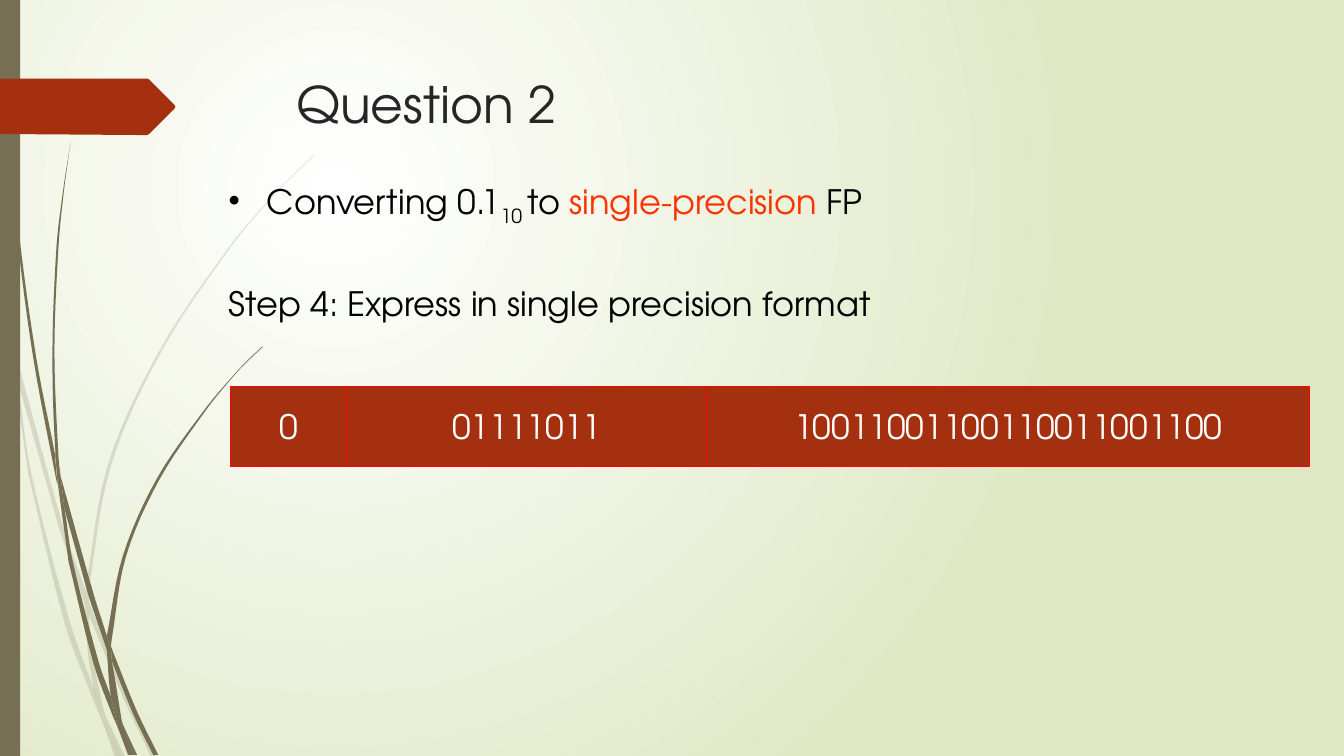
from dataclasses import dataclass
from math import dist

from lxml.etree import SubElement
from pptx import Presentation
from pptx.dml.color import RGBColor as Color
from pptx.enum.shapes import MSO_SHAPE as Shape
from pptx.enum.text import MSO_ANCHOR as Anchor, PP_ALIGN as Align
from pptx.oxml.ns import qn
from pptx.util import Inches, Pt

# The page is a grid of 1333 columns and 750 rows
COLUMNS, ROWS = 1333, 750
CELL = Inches(0.01)


@dataclass(frozen=True)
class Theme:
    font: str = "TeX Gyre Adventor"
    title_size: int = 36
    body_size: int = 24
    title: str = "262626"
    body: str = "000000"
    emphasis: str = "FF3300"
    accent: str = "A53010"
    outline: str = "FF0000"
    grass: str = "766F54"
    light: str = "FFFFFF"
    backdrop: str = "DFE8C4"


THEME = Theme()

# Each piece of grass has two edges: one going out, one coming back
PALE_GRASS = [
    ([(11, 350), (9, 322), (0, 282)], [(0, 299), (10, 344), (11, 350)]),
    ([(58, 522), (84, 599)], [(85, 586), (62, 520), (14, 345)], [(17, 376), (58, 522)]),
    ([(92, 607), (88, 596)], [(88, 610), (123, 694), (150, 751)],
     [(155, 751), (127, 692), (92, 607)]),
    ([(119, 751), (124, 751)], [(105, 711), (119, 751)]),
    ([(93, 683), (70, 619), (31, 469), (17, 376), (11, 350)],
     [(28, 470), (65, 621), (92, 693), (101, 714)], [(99, 707), (93, 683)]),
    ([(84, 599), (87, 646), (93, 683), (96, 692), (105, 711)],
     [(103, 706), (91, 646), (88, 610)], [(88, 608), (84, 599)]),
    ([(88, 584), (110, 462), (160, 349), (229, 245), (268, 198), (290, 175), (312, 154)],
     [(312, 153), (289, 175), (268, 197), (228, 244), (158, 348), (107, 461),
      (85, 584), (85, 586)], [(88, 596), (88, 584)]),
    ([(101, 714), (114, 751)], [(119, 751), (101, 714)]),
    ([(88, 608), (88, 610), (88, 596)], [(85, 586), (84, 599)]),
    ([(96, 692), (93, 683)], [(99, 707), (101, 714), (119, 751)],
     [(105, 711), (96, 692)]),
]
DARK_GRASS = [
    ([(4, 0), (4, 48), (7, 110), (17, 233), (33, 355), (56, 477), (57, 481)],
     [(55, 457), (55, 453), (36, 355), (19, 232), (8, 109), (5, 48), (4, 0)], [(3, 0)]),
    ([(88, 592), (106, 645)], [(106, 633), (106, 631), (93, 590), (60, 472)],
     [(64, 505), (88, 592)]),
    ([(113, 649), (110, 641)], [(111, 656), (132, 708), (152, 749)],
     [(157, 749), (136, 706), (113, 649)]),
    ([(110, 691), (98, 657), (72, 556), (64, 505), (57, 477)],
     [(68, 557), (93, 659), (111, 708), (117, 722)], [(116, 717), (110, 691)]),
    ([(60, 472), (58, 453), (54, 349), (58, 245), (63, 193), (70, 141)],
     [(70, 141), (62, 193), (56, 245), (52, 349), (55, 449), (60, 472)]),
    ([(133, 749), (136, 749)], [(122, 719), (133, 749)]),
    ([(57, 477), (64, 505)], [(60, 472), (55, 449)], [(55, 453), (57, 477)]),
    ([(111, 633), (125, 552), (158, 476), (205, 406), (231, 374), (245, 359), (261, 344)],
     [(260, 344), (245, 358), (231, 373), (204, 405), (156, 474), (122, 551),
      (106, 631)], [(110, 641), (111, 633)]),
    ([(117, 722), (127, 749)], [(131, 749), (117, 722)]),
    ([(106, 645), (110, 691), (116, 706), (122, 719)],
     [(121, 716), (111, 656), (109, 651), (106, 645)]),
    ([(106, 645), (109, 651), (111, 656)], [(110, 641), (106, 631)], [(106, 633)]),
    ([(116, 706), (110, 691)], [(116, 717), (117, 722), (130, 749)],
     [(133, 749), (122, 719), (116, 706)]),
]
ARROW = [(0, 78), (146, 78), (148, 79), (173, 104), (174, 106),
         (173, 108), (148, 133), (146, 134), (136, 134), (0, 133)]


def cells(*counts):
    return [int(count * CELL) for count in counts]


def smooth(edge, steps=6):
    """Points on a smooth curve that passes through every point of the edge."""
    if len(edge) < 3:
        return edge
    last = len(edge) - 1
    slopes = []
    for i in range(last + 1):
        before, after = max(i - 1, 0), min(i + 1, last)
        length = sum(dist(edge[k], edge[k + 1]) for k in range(before, after))
        slopes.append([(b - a) / length for a, b in zip(edge[before], edge[after])])
    points = [edge[0]]
    for i in range(last):
        length = dist(edge[i], edge[i + 1])
        for step in range(1, steps + 1):
            t = step / steps
            pull = 3 * t**2 - 2 * t**3
            points.append(tuple(
                a + (b - a) * pull
                + length * ((t**3 - 2 * t**2 + t) * m + (t**3 - t**2) * n)
                for a, b, m, n in zip(edge[i], edge[i + 1], slopes[i], slopes[i + 1])))
    return points


def paint(shape, color):
    shape.shadow.inherit = False
    shape.fill.solid()
    shape.fill.fore_color.rgb = Color.from_string(color)
    shape.line.fill.background()


def style(span, size, color):
    span.font.name = THEME.font
    span.font.size = Pt(size)
    span.font.color.rgb = Color.from_string(color)


def add_outline(page, points, color, opacity=100):
    points = [cells(*point) for point in points]
    builder = page.shapes.build_freeform(*points[0])
    builder.add_line_segments(points[1:], close=True)
    shape = builder.convert_to_shape()
    paint(shape, color)
    if opacity < 100:
        tint = shape.fill._xPr.find(".//" + qn("a:srgbClr"))
        SubElement(tint, qn("a:alpha"), val=str(opacity * 1000))


def add_text_box(page, box):
    frame = page.shapes.add_textbox(*cells(*box)).text_frame
    frame.word_wrap = True
    return frame


def set_backdrop(page):
    fill = page.background.fill
    fill.gradient()
    for stop, place, color in zip(fill.gradient_stops, (0, 1), (THEME.light, THEME.backdrop)):
        stop.position = place
        stop.color.rgb = Color.from_string(color)
    gradient = page._element.find(".//" + qn("a:gradFill"))
    gradient.remove(gradient.find(qn("a:lin")))
    circle = SubElement(gradient, qn("a:path"), path="circle")
    SubElement(circle, qn("a:fillToRect"), l="50000", t="50000", r="100000", b="100000")


def add_decoration(page, box):
    for pieces, opacity in ((PALE_GRASS, 20), (DARK_GRASS, 100)):
        for edges in pieces:
            points = [point for edge in edges for point in smooth(edge)]
            add_outline(page, points, THEME.grass, opacity)
    paint(page.shapes.add_shape(Shape.RECTANGLE, *cells(*box)), THEME.grass)
    add_outline(page, ARROW, THEME.accent)


def add_title(page, box, text):
    para = add_text_box(page, box).paragraphs[0]
    para.text = text
    style(para.runs[0], THEME.title_size, THEME.title)


def add_body(page, box, spans, step):
    frame = add_text_box(page, box)
    # Bulleted task
    task = frame.paragraphs[0]
    task.space_before = Pt(4.8)
    indent = Inches(0.38)
    settings = task._p.get_or_add_pPr()
    settings.set("marL", str(indent))
    settings.set("indent", str(-indent))
    SubElement(settings, qn("a:buChar"), char="•")
    for text, color, baseline in spans:
        span = task.add_run()
        span.text = text
        style(span, THEME.body_size, color)
        if baseline:
            span.font._element.set("baseline", str(baseline * 1000))
    # Step line
    para = frame.add_paragraph()
    para.text = step
    para.space_before = Pt(40)
    style(para.runs[0], THEME.body_size, THEME.body)


def add_bit_fields(page, box, fields):
    left, top, width, height = box
    total = sum(share for _, share in fields)
    for bits, share in fields:
        field_width = width * share / total
        field = page.shapes.add_shape(Shape.RECTANGLE, *cells(left, top, field_width, height))
        paint(field, THEME.accent)
        field.line.color.rgb = Color.from_string(THEME.outline)
        field.line.width = Pt(0.75)
        frame = field.text_frame
        frame.word_wrap = False
        frame.vertical_anchor = Anchor.MIDDLE
        para = frame.paragraphs[0]
        para.text = bits
        para.alignment = Align.CENTER
        style(para.runs[0], THEME.body_size, THEME.light)
        left += field_width


def main():
    deck = Presentation()
    deck.slide_width, deck.slide_height = cells(COLUMNS, ROWS)
    page = deck.slides.add_slide(deck.slide_layouts[6])
    set_backdrop(page)
    add_decoration(page, (0, 0, 20, ROWS))
    add_title(page, (284, 68, 975, 140), "Question 2")
    add_body(page, (217, 175, 950, 475), [
        ("Converting 0.1", THEME.body, 0), ("10 ", THEME.body, -25), ("to ", THEME.body, 0),
        ("single-precision", THEME.emphasis, 0), (" FP", THEME.body, 0),
    ], "Step 4: Express in single precision format")
    add_bit_fields(page, (229, 383, 1070, 80), [
        ("0", 115), ("01111011", 357), ("10011001100110011001100", 598)])
    deck.save("out.pptx")


if __name__ == "__main__":
    main()
